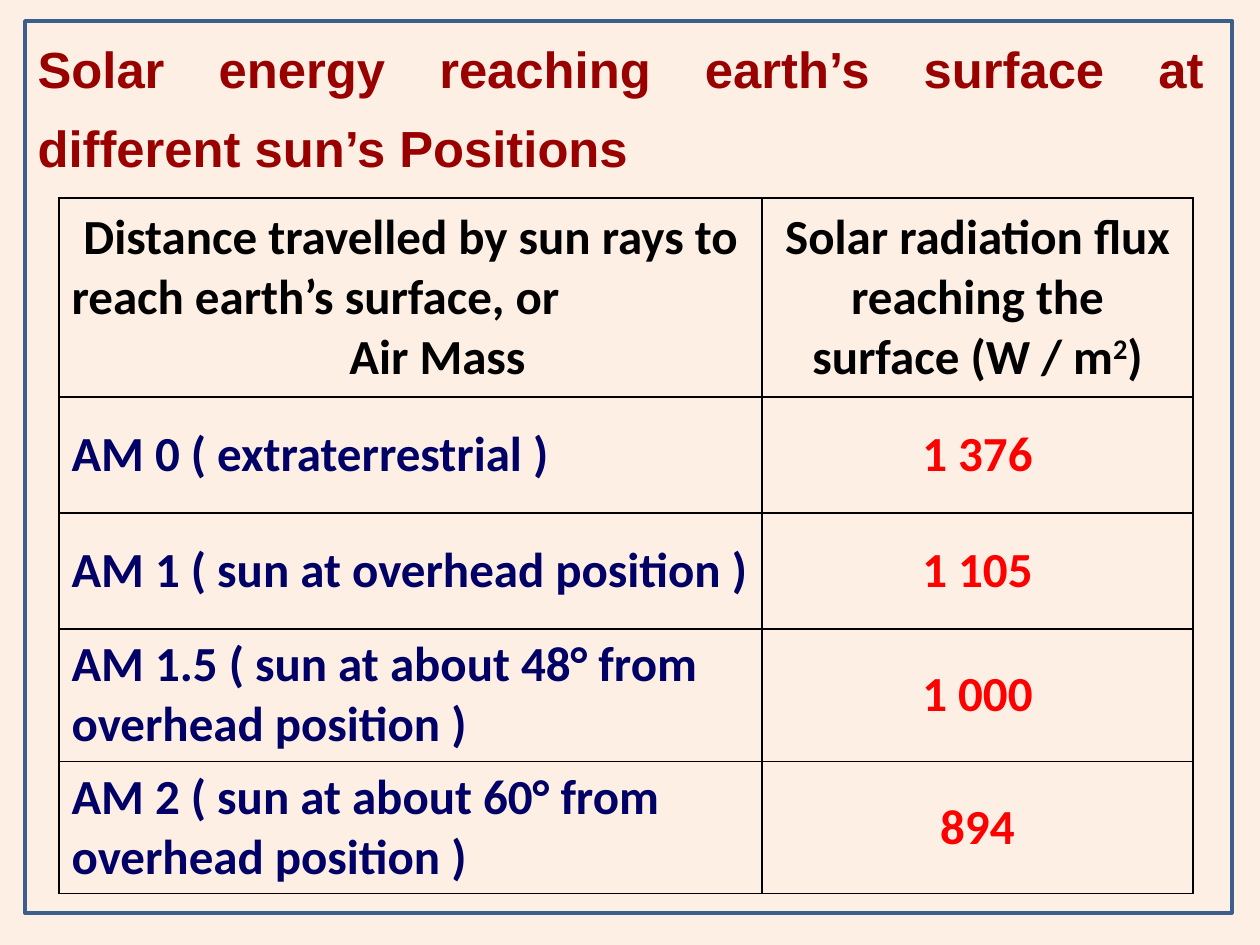
from dataclasses import dataclass

from lxml.etree import SubElement
from pptx import Presentation
from pptx.dml.color import RGBColor
from pptx.enum.shapes import MSO_SHAPE
from pptx.enum.text import MSO_ANCHOR, MSO_AUTO_SIZE, PP_ALIGN
from pptx.oxml import parse_xml
from pptx.oxml.ns import nsdecls, qn
from pptx.util import Pt

PX = 914400 / 126


@dataclass(frozen=True)
class Theme:
    background: str = "FDEFE3"
    frame: str = "3A5F8C"
    title: str = "990000"
    header: str = "000000"
    label: str = "000066"
    value: str = "FF0000"
    border: str = "000000"
    title_font: str = "Arial"
    table_font: str = "Calibri"
    title_size: int = 29
    table_size: int = 28


theme = Theme()


def px(*lengths):
    """Turn pixel lengths into a list of EMU."""
    return [round(n * PX) for n in lengths]


def style(p, name, size, color, align):
    p.alignment = align
    p.font.name, p.font.size, p.font.bold = name, Pt(size), True
    p.font.color.rgb = RGBColor.from_string(color)


prs = Presentation()
prs.slide_width, prs.slide_height = px(1260, 945)
slide = prs.slides.add_slide(prs.slide_layouts[5])
slide.background.fill.solid()
slide.background.fill.fore_color.rgb = RGBColor.from_string(theme.background)

# Frame
sp = slide.shapes.add_shape(MSO_SHAPE.RECTANGLE, *px(25, 21, 1207, 892))
sp.shadow.inherit = False
sp.fill.background()
sp.line.color.rgb = RGBColor.from_string(theme.frame)
sp.line.width = Pt(2)

# Title
title = slide.shapes.title
title.left, title.top, title.width, title.height = px(25, 13, 1193, 249)
tf = title.text_frame
tf.text = "Solar energy reaching earth’s surface at different sun’s Positions"
tf.word_wrap = True
tf.auto_size = MSO_AUTO_SIZE.NONE
tf.vertical_anchor = MSO_ANCHOR.TOP
p = tf.paragraphs[0]
p.line_spacing = 1.3
style(p, theme.title_font, theme.title_size, theme.title, PP_ALIGN.JUSTIFY)

# Table
rows = [
    ("Distance travelled by sun rays to\nreach earth’s surface, or\nAir Mass",
     "Solar radiation flux reaching the surface (W / m"),
    ("AM 0 ( extraterrestrial )", "1 376"),
    ("AM 1 ( sun at overhead position )", "1 105"),
    ("AM 1.5 ( sun at about 48° from overhead position )", "1 000"),
    ("AM 2 ( sun at about 60° from overhead position )", "894"),
]
col_widths = px(703, 431)
row_heights = px(199, 116, 116, 130, 130)
table = slide.shapes.add_table(
    len(rows), len(col_widths), *px(59, 198), sum(col_widths), sum(row_heights)).table
table.first_row = table.horz_banding = False
for column, width in zip(table.columns, col_widths):
    column.width = width
for row, height in zip(table.rows, row_heights):
    row.height = height

for i, texts in enumerate(rows):
    for j, text in enumerate(texts):
        cell = table.cell(i, j)
        cell.text = text
        cell.vertical_anchor = MSO_ANCHOR.MIDDLE
        cell.fill.background()
        color = theme.header if i == 0 else (theme.label, theme.value)[j]
        align = PP_ALIGN.LEFT if i and j == 0 else PP_ALIGN.CENTER
        for p in cell.text_frame.paragraphs:
            style(p, theme.table_font, theme.table_size, color, align)
        tc_pr = cell._tc.get_or_add_tcPr()
        for k, side in enumerate(("lnL", "lnR", "lnT", "lnB")):
            ln = parse_xml(f'<a:{side} {nsdecls("a")} w="{Pt(1)}"/>')
            fill = SubElement(ln, qn("a:solidFill"))
            SubElement(fill, qn("a:srgbClr"), val=theme.border)
            tc_pr.insert(k, ln)

# Header details: staggered lines on the left, squared metres on the right
lines = table.cell(0, 0).text_frame.paragraphs
lines[1].alignment = PP_ALIGN.LEFT
lines[2]._p.get_or_add_pPr().set("marL", str(px(54)[0]))
p = table.cell(0, 1).text_frame.paragraphs[0]
r = p.add_run()
r.text = "2"
r._r.get_or_add_rPr().set("baseline", "30000")
p.add_run().text = ")"

prs.save("out.pptx")
